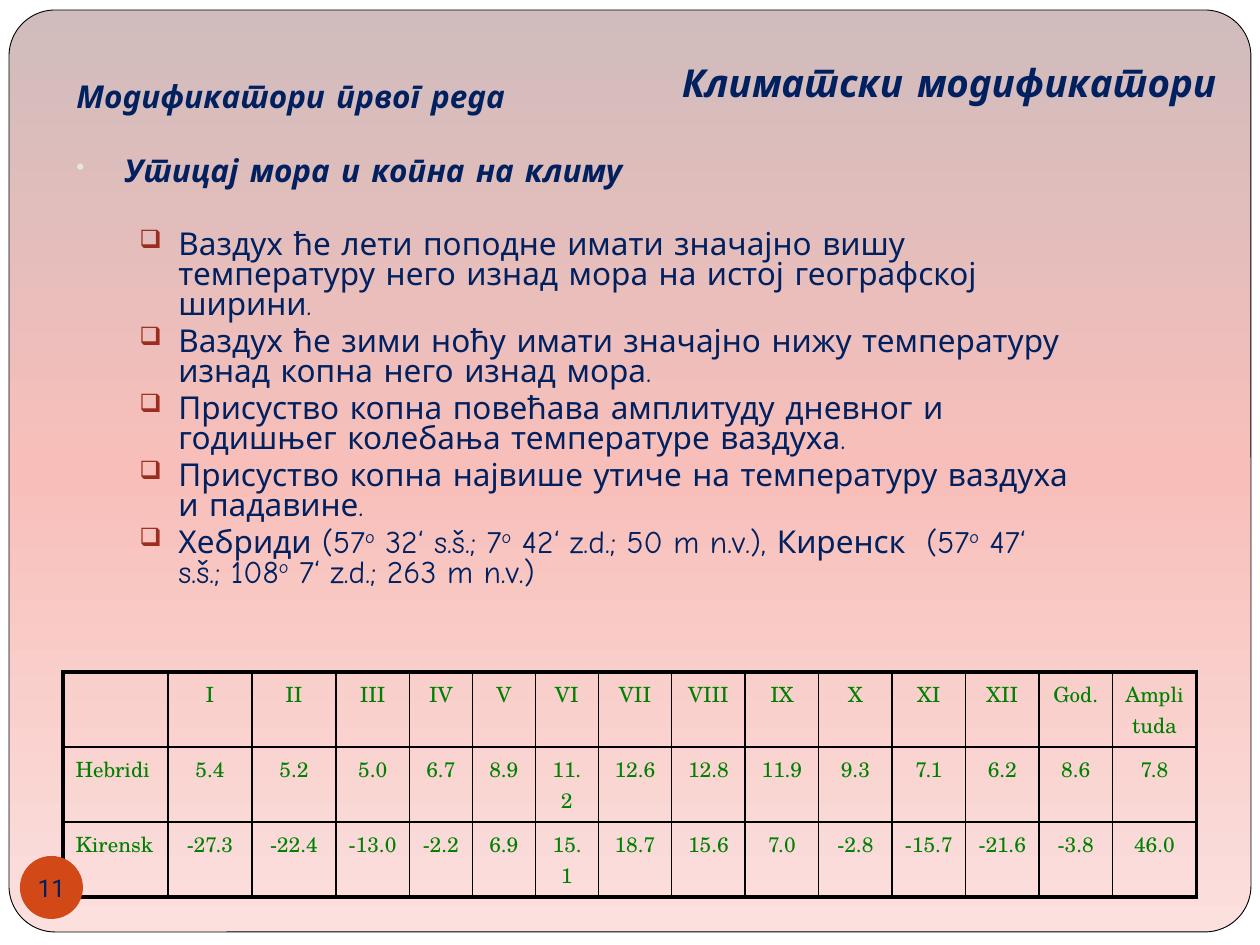
from copy import deepcopy

from lxml.etree import SubElement
from pptx import Presentation
from pptx.dml.color import RGBColor
from pptx.enum.shapes import MSO_SHAPE as Shape
from pptx.enum.text import MSO_ANCHOR as Anchor, PP_ALIGN as Align
from pptx.oxml.ns import qn
from pptx.util import Pt

PX = 914400 // 126
NAVY, GREEN, BLACK = "002060", "008000", "000000"
TITLE = "Климатски модификатори"
HEADING = "Модификатори првог реда"
TOPIC = "Утицај мора и копна на климу"
POINTS = [
    "Ваздух ће лети поподне имати значајно вишу температуру него изнад мора на истој географској ширини.",
    "Ваздух ће зими ноћу имати значајно нижу температуру изнад копна него изнад мора.",
    "Присуство копна повећава амплитуду дневног и годишњег колебања температуре ваздуха.",
    "Присуство копна највише утиче на температуру ваздуха и падавине.",
    "Хебриди (57|o| 32‘ s.š.; 7|o| 42‘ z.d.; 50 m n.v.), Киренск  (57|o| 47‘ s.š.; 108|o| 7‘ z.d.; 263 m n.v.)",
]
PAGE_GRADIENT = [(0, "D0BCBC"), (0.5, "F8BFBA"), (1, "FBE0DE")]
COLUMN_WEIGHTS = [10, 8, 8, 7, 6, 6, 6, 7, 7, 7, 7, 7, 7, 7, 8]
ROW_HEIGHT = 75
TEMPERATURES = [
    ["", "I", "II", "III", "IV", "V", "VI", "VII", "VIII", "IX", "X", "XI", "XII", "God.", "Amplituda"],
    ["Hebridi", "5.4", "5.2", "5.0", "6.7", "8.9", "11.2", "12.6", "12.8", "11.9", "9.3", "7.1", "6.2", "8.6", "7.8"],
    ["Kirensk", "-27.3", "-22.4", "-13.0", "-2.2", "6.9", "15.1", "18.7", "15.6", "7.0", "-2.8", "-15.7", "-21.6",
     "-3.8", "46.0"],
]


def px(*lengths):
    return [round(length * PX) for length in lengths]


def color(value):
    return RGBColor.from_string(value)


def add_text(paragraph, text, size=18, font="Comic Neue", fill=NAVY, strong=False, align=Align.LEFT,
             before=None, spacing=None, margin=0, hanging=0, bullet=None, lang="sr-Cyrl-RS"):
    """Fill a paragraph; parts between bars are superscript, bullet is (char, colour, percent)."""
    paragraph.alignment = align
    paragraph.space_before = Pt(size * 0.2 if before is None else before)
    if spacing:
        paragraph.line_spacing = spacing
    properties = paragraph._p.get_or_add_pPr()
    for name, length in zip(("marL", "indent"), px(margin, -hanging)):
        properties.set(name, str(length))
    if bullet:
        character, tint, percent = bullet
        SubElement(SubElement(properties, qn("a:buClr")), qn("a:srgbClr"), val=tint)
        SubElement(properties, qn("a:buSzPct"), val=str(percent * 1000))
        SubElement(properties, qn("a:buChar"), char=character)
    for index, part in enumerate(text.split("|")):
        run = paragraph.add_run()
        run.text = part
        run.font.size, run.font.name = Pt(size), font
        run.font.bold = run.font.italic = strong
        run.font.color.rgb = color(fill)
        run_properties = run._r.get_or_add_rPr()
        run_properties.set("lang", lang)
        if index % 2:
            run_properties.set("baseline", "30000")


def add_box(slide, *box):
    frame = slide.shapes.add_textbox(*px(*box)).text_frame
    frame.word_wrap = True
    return frame


def add_background(slide):
    slide.background.fill.solid()
    slide.background.fill.fore_color.rgb = color("FFFFFF")
    panel = slide.shapes.add_shape(Shape.ROUNDED_RECTANGLE, *px(9, 10, 1242, 922))
    panel.adjustments[0] = 0.05
    panel.shadow.inherit = False
    panel.line.color.rgb, panel.line.width = color(BLACK), Pt(0.5)
    panel.fill.gradient()
    panel.fill.gradient_angle = 270
    stop_list = panel._element.spPr.find(".//" + qn("a:gsLst"))
    stop_list.append(deepcopy(stop_list[0]))
    for stop, (position, tint) in zip(panel.fill.gradient_stops, PAGE_GRADIENT):
        stop.position, stop.color.rgb = position, color(tint)


def add_body(slide):
    frame = add_box(slide, 64, 78, 1018, 553)
    heading_format = dict(strong=True, spacing=0.8, margin=48, hanging=48)
    add_text(frame.paragraphs[0], HEADING, **heading_format)
    add_text(frame.add_paragraph(), TOPIC, before=25, bullet=("•", "E9E5DC", 75), **heading_format)
    for index, point in enumerate(POINTS):
        add_text(frame.add_paragraph(), point, before=None if index else 24.5, spacing=0.8,
                 margin=102, hanging=39, bullet=("❑", "9B2D1F", 80))


def set_border(cell, side, width):
    line = SubElement(cell._tc.get_or_add_tcPr(), qn("a:" + side), w=str(Pt(width)))
    SubElement(SubElement(line, qn("a:solidFill")), qn("a:srgbClr"), val=BLACK)


def add_temperatures(slide):
    rows, columns = len(TEMPERATURES), len(COLUMN_WEIGHTS)
    width = 1134
    table = slide.shapes.add_table(rows, columns, *px(63, 672, width, rows * ROW_HEIGHT)).table
    table.first_row = table.horz_banding = False
    for column, weight in zip(table.columns, COLUMN_WEIGHTS):
        column.width, = px(width * weight / sum(COLUMN_WEIGHTS))
    for r, values in enumerate(TEMPERATURES):
        table.rows[r].height, = px(ROW_HEIGHT)
        for c, value in enumerate(values):
            cell = table.cell(r, c)
            outer = {"lnL": c == 0, "lnR": c == columns - 1, "lnT": r == 0, "lnB": r == rows - 1}
            for side, is_outer in outer.items():
                set_border(cell, side, 2.25 if is_outer else 1)
            cell.fill.background()
            if value:
                add_text(cell.text_frame.paragraphs[0], value, size=12, font="TeX Gyre Schola", fill=GREEN,
                         align=Align.CENTER if c else Align.LEFT, lang="sr-Latn-RS")


def add_page_number(slide):
    badge = slide.shapes.add_shape(Shape.OVAL, *px(20, 856, 63, 63))
    badge.shadow.inherit = False
    badge.fill.solid()
    badge.fill.fore_color.rgb = color("D34817")
    badge.line.fill.background()
    frame = badge.text_frame
    frame.margin_left = frame.margin_right = frame.margin_top = frame.margin_bottom = 0
    frame.word_wrap, frame.vertical_anchor = False, Anchor.MIDDLE
    add_text(frame.paragraphs[0], "11", size=14, font="Roboto", align=Align.CENTER, before=0)


def main():
    presentation = Presentation()
    presentation.slide_width, presentation.slide_height = px(1260, 945)
    slide = presentation.slides.add_slide(presentation.slide_layouts[6])
    add_background(slide)
    add_body(slide)
    add_temperatures(slide)
    add_page_number(slide)
    add_text(add_box(slide, 63, 53, 1166, 53).paragraphs[0], TITLE, size=22, strong=True,
             align=Align.RIGHT, margin=48, hanging=48)
    presentation.save("out.pptx")


if __name__ == "__main__":
    main()
